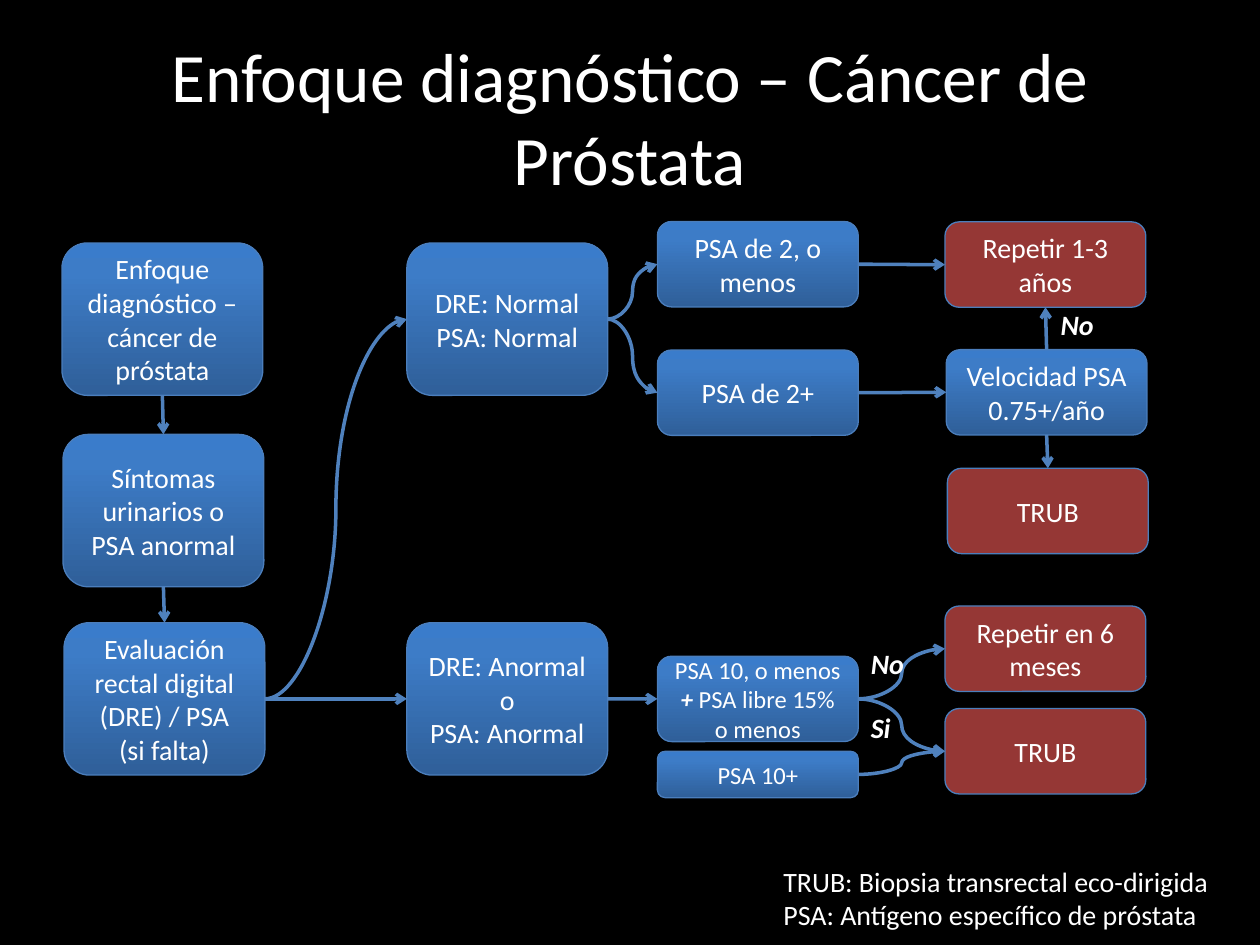
from copy import deepcopy

from pptx import Presentation
from pptx.dml.color import RGBColor
from pptx.enum.shapes import MSO_CONNECTOR as LINK, MSO_SHAPE
from pptx.enum.text import MSO_ANCHOR, MSO_AUTO_SIZE, PP_ALIGN
from pptx.oxml.ns import qn
from pptx.util import Pt
from lxml.etree import SubElement

BLACK = RGBColor(0x00, 0x00, 0x00)
WHITE = RGBColor(0xFF, 0xFF, 0xFF)
RED = RGBColor(0x95, 0x37, 0x35)
OUTLINE = RGBColor(0x4B, 0x7E, 0xBC)
ARROW = RGBColor(0x4F, 0x81, 0xBD)
BLUES = [
    (0, RGBColor(0x2F, 0x5F, 0x99)),
    (0.8, RGBColor(0x3D, 0x7C, 0xC7)),
    (1, RGBColor(0x3A, 0x7C, 0xCB)),
]
FONT = "Calibri"
BOX_WIDTH, TALL, SHORT, THIN = 114.8, 87.1, 48.8, 26.5
START_X, EXAM_X, PSA_X, ACTION_X = 35.4, 232.5, 375.7, 540
TOP, SIDE_LEFT, BOTTOM, SIDE_RIGHT = range(4)


def add_run(paragraph, text, size=16, emphasis=False):
    run = paragraph.add_run()
    run.text = text
    run.font.name = FONT
    run.font.size = Pt(size)
    run.font.color.rgb = WHITE
    run.font.bold = run.font.italic = emphasis


def write_lines(frame, lines, size=16, align=PP_ALIGN.LEFT, emphasis=False):
    for index, line in enumerate(lines):
        paragraph = frame.add_paragraph() if index else frame.paragraphs[0]
        paragraph.alignment = align
        for part in [line] if isinstance(line, str) else line:
            add_run(paragraph, part, size, emphasis or part == "+")


def fill_blue(box):
    box.fill.gradient()
    box.fill.gradient_angle = 90
    stop_list = box._element.spPr.find(".//" + qn("a:gsLst"))
    stop_list.append(deepcopy(stop_list[-1]))
    for stop, (position, color) in zip(box.fill.gradient_stops, BLUES):
        stop.position = position
        stop.color.rgb = color


def add_step(slide, left, top, height, lines, red=False, size=16):
    box = slide.shapes.add_shape(
        MSO_SHAPE.ROUNDED_RECTANGLE, Pt(left), Pt(top), Pt(BOX_WIDTH), Pt(height))
    box.shadow.inherit = False
    if red:
        box.fill.solid()
        box.fill.fore_color.rgb = RED
    else:
        fill_blue(box)
    box.line.color.rgb = OUTLINE
    box.line.width = Pt(0.75)
    box.text_frame.vertical_anchor = MSO_ANCHOR.MIDDLE
    write_lines(box.text_frame, lines, size, PP_ALIGN.CENTER)
    return box


def add_arrow(slide, origin, target, sides=(SIDE_RIGHT, SIDE_LEFT), kind=LINK.CURVE):
    arrow = slide.shapes.add_connector(kind, 0, 0, 0, 0)
    arrow.begin_connect(origin, sides[0])
    arrow.end_connect(target, sides[1])
    arrow.line.color.rgb = ARROW
    arrow.line.width = Pt(2)
    SubElement(arrow.line._get_or_add_ln(), qn("a:tailEnd"), type="arrow")
    SubElement(arrow._element.spPr, qn("a:effectLst"))


def add_note(slide, left, top, width, height, lines, emphasis=False):
    note = slide.shapes.add_textbox(Pt(left), Pt(top), Pt(width), Pt(height))
    note.text_frame.word_wrap = False
    write_lines(note.text_frame, lines, emphasis=emphasis)


def add_title(slide, text):
    title = slide.shapes.title
    title.left, title.top, title.width, title.height = Pt(36), Pt(21.6), Pt(648), Pt(90)
    title.text_frame.auto_size = MSO_AUTO_SIZE.NONE
    title.text_frame.vertical_anchor = MSO_ANCHOR.MIDDLE
    write_lines(title.text_frame, [text], 39.6, PP_ALIGN.CENTER)


def main():
    deck = Presentation()
    deck.slide_width, deck.slide_height = Pt(720), Pt(540)
    slide = deck.slides.add_slide(deck.slide_layouts[5])
    slide.background.fill.solid()
    slide.background.fill.fore_color.rgb = BLACK
    add_title(slide, "Enfoque diagnóstico – Cáncer de Próstata")

    approach = add_step(slide, START_X, 138.8, TALL,
                        ["Enfoque diagnóstico – cáncer de próstata"])
    symptoms = add_step(slide, START_X + 0.6, 248.2, TALL,
                        ["Síntomas urinarios o PSA anormal"])
    evaluation = add_step(slide, START_X + 1.2, 355.8, TALL,
                          ["Evaluación rectal digital (DRE) / PSA (si falta)"])
    normal = add_step(slide, EXAM_X, 138.8, TALL, ["DRE: Normal", "PSA: Normal"])
    abnormal = add_step(slide, EXAM_X, 355.8, TALL, ["DRE: Anormal o", "PSA: Anormal"])
    psa_low = add_step(slide, PSA_X, 126.6, SHORT, ["PSA de 2, o menos"])
    psa_high = add_step(slide, PSA_X, 200, SHORT, ["PSA de 2+"])
    psa_free = add_step(slide, PSA_X, 375, SHORT,
                        [["PSA 10, o menos ", "+", " PSA libre 15% o menos"]], size=14)
    psa_ten = add_step(slide, PSA_X, 429.3, THIN, ["PSA 10+"], size=14)
    repeat_years = add_step(slide, ACTION_X, 126.8, SHORT, ["Repetir 1-3 años"], red=True)
    velocity = add_step(slide, ACTION_X + 0.7, 199.8, SHORT, ["Velocidad PSA 0.75+/año"])
    biopsy_velocity = add_step(slide, ACTION_X + 1.4, 267.6, SHORT, ["TRUB"], red=True)
    repeat_months = add_step(slide, ACTION_X, 346.3, SHORT, ["Repetir en 6 meses"], red=True)
    biopsy = add_step(slide, ACTION_X, 404.9, SHORT, ["TRUB"], red=True)

    for origin, target in [
        (evaluation, normal), (evaluation, abnormal),
        (normal, psa_low), (normal, psa_high),
        (psa_low, repeat_years), (psa_high, velocity),
        (abnormal, psa_free), (psa_free, biopsy),
        (psa_free, repeat_months), (psa_ten, biopsy),
    ]:
        add_arrow(slide, origin, target)
    down, up = (BOTTOM, TOP), (TOP, BOTTOM)
    for origin, target, sides in [
        (approach, symptoms, down), (symptoms, evaluation, down),
        (velocity, repeat_years, up), (velocity, biopsy_velocity, down),
    ]:
        add_arrow(slide, origin, target, sides, LINK.STRAIGHT)

    for left, top, width, answer in [
        (599, 172.2, 37.4, "No"), (490.5, 402.5, 29.5, "Si"), (490.5, 365.8, 37.4, "No"),
    ]:
        add_note(slide, left, top, width, 26.6, [answer], emphasis=True)
    add_note(slide, 440.6, 490.3, 261.4, 46, [
        "TRUB: Biopsia transrectal eco-dirigida",
        "PSA: Antígeno específico de próstata",
    ])
    deck.save("out.pptx")


if __name__ == "__main__":
    main()
